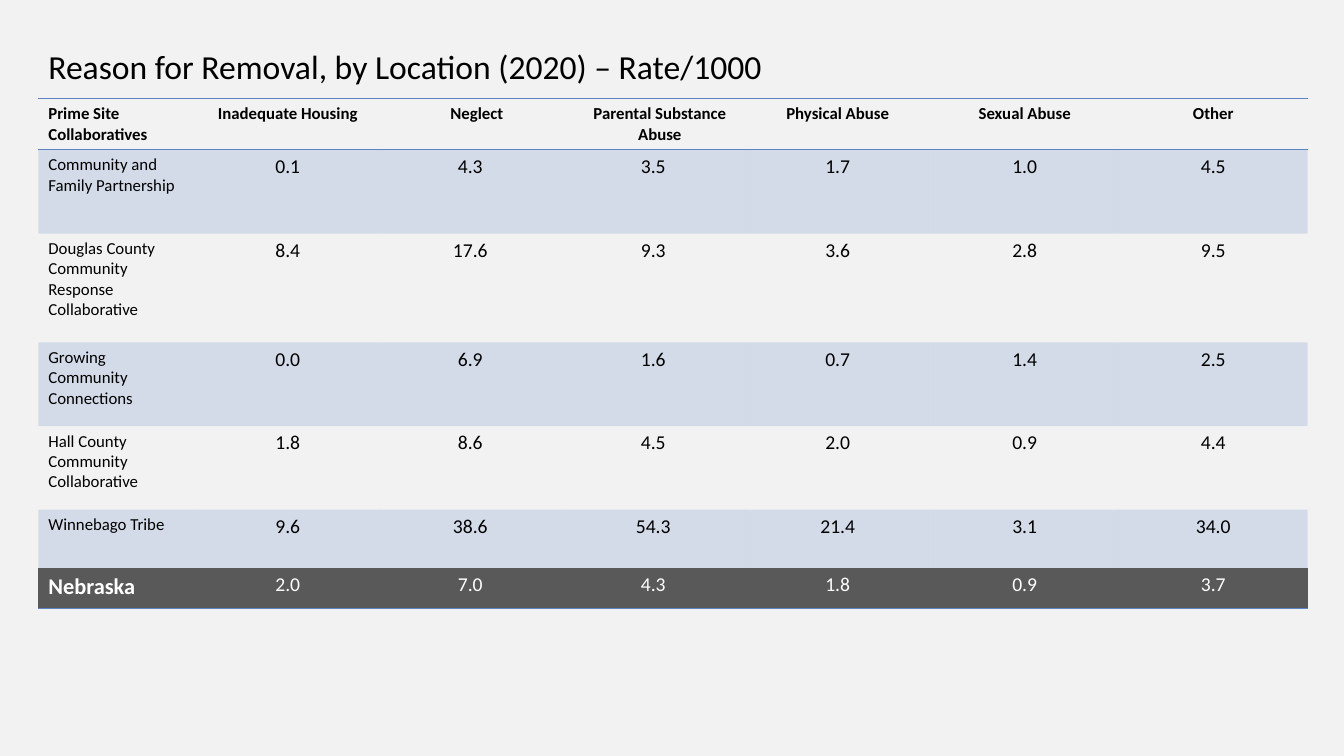
"""Build a slide with a table of removal reasons by location."""
import pptx
import pptx.util
import pptx.dml.color
import pptx.enum.text
import pptx.oxml
import pptx.oxml.ns

Inches, Pt = pptx.util.Inches, pptx.util.Pt
ALIGN = pptx.enum.text.PP_ALIGN
BLUE, DARK = "5C83C4", "595959"


def color(code):
    return pptx.dml.color.RGBColor.from_string(code)


def rule(cell, side):
    line = pptx.oxml.parse_xml(
        f'<a:{side} {pptx.oxml.ns.nsdecls("a")} w="12700"><a:solidFill>'
        f'<a:srgbClr val="{BLUE}"/></a:solidFill></a:{side}>')
    cell._tc.get_or_add_tcPr().insert(0, line)


heads = ["Prime Site Collaboratives", "Inadequate Housing", "Neglect",
         "Parental Substance Abuse", "Physical Abuse", "Sexual Abuse", "Other"]
sites = [
    ["Community and Family Partnership", 0.1, 4.3, 3.5, 1.7, 1.0, 4.5],
    ["Douglas County Community Response Collaborative",
     8.4, 17.6, 9.3, 3.6, 2.8, 9.5],
    ["Growing Community Connections", 0.0, 6.9, 1.6, 0.7, 1.4, 2.5],
    ["Hall County Community Collaborative", 1.8, 8.6, 4.5, 2.0, 0.9, 4.4],
    ["Winnebago Tribe", 9.6, 38.6, 54.3, 21.4, 3.1, 34.0],
    ["Nebraska", 2.0, 7.0, 4.3, 1.8, 0.9, 3.7],
]
rows = [heads] + sites
widths = [1.57, 1.81, 1.81, 0.13, 1.69, 1.84, 1.87, 1.87]
heights = [0.5, 0.83, 1.08, 0.83, 0.83, 0.58, 0.4]
last = len(rows) - 1

deck = pptx.Presentation()
deck.slide_width, deck.slide_height = Inches(13.33), Inches(7.5)
slide = deck.slides.add_slide(deck.slide_layouts[5])
slide.background.fill.solid()
slide.background.fill.fore_color.rgb = color("F2F2F2")

title = slide.shapes.title
title.left, title.top = Inches(0.38), Inches(0.38)
title.width, title.height = Inches(12.32), Inches(0.6)
title.text_frame.text = "Reason for Removal, by Location (2020) – Rate/1000"
title.text_frame.vertical_anchor = pptx.enum.text.MSO_ANCHOR.MIDDLE
para = title.text_frame.paragraphs[0]
para.alignment = ALIGN.LEFT
para.line_spacing = 0.9
para.font.name, para.font.size = "Calibri", Pt(24)
para.font.color.rgb = color("000000")

frame = slide.shapes.add_table(
    len(rows), len(widths), Inches(0.38), Inches(0.98),
    Inches(sum(widths)), Inches(sum(heights)))
table = frame.table
style = table._tbl.tblPr.find(pptx.oxml.ns.qn("a:tableStyleId"))
style.text = "{2D5ABB26-0587-4C30-8999-92F81FD0307C}"
table.horz_banding = False
for col, width in zip(table.columns, widths):
    col.width = Inches(width)
for row, height in zip(table.rows, heights):
    row.height = Inches(height)

for r, row in enumerate(rows):
    start = 2 if r == 0 else 3
    table.cell(r, start).merge(table.cell(r, start + 1))
    slots = [c for c in range(len(widths)) if c != start + 1]
    for c, value in zip(slots, row):
        cell = table.cell(r, c)
        cell.text = str(value)
        para = cell.text_frame.paragraphs[0]
        para.alignment = ALIGN.CENTER if c else ALIGN.LEFT
        font = para.font
        font.name = "Calibri"
        font.size = Pt(12 if r == 0 or c == 0 else 14)
        font.bold = r == 0
        font.color.rgb = color("FFFFFF" if r == last else "000000")
        if r == last and c == 0:
            font.size, font.bold = Pt(16), True

    for cell in table.rows[r].cells:
        if r == last or r % 2:
            cell.fill.solid()
            cell.fill.fore_color.rgb = color(DARK if r == last else BLUE)
        else:
            cell.fill.background()
        if r % 2:
            tint = cell._tc.tcPr.find(".//" + pptx.oxml.ns.qn("a:srgbClr"))
            tint.append(pptx.oxml.parse_xml(
                f'<a:alpha {pptx.oxml.ns.nsdecls("a")} val="20000"/>'))
        if r in (0, last):
            rule(cell, "lnB")
        if r == 0:
            rule(cell, "lnT")

deck.save("out.pptx")
